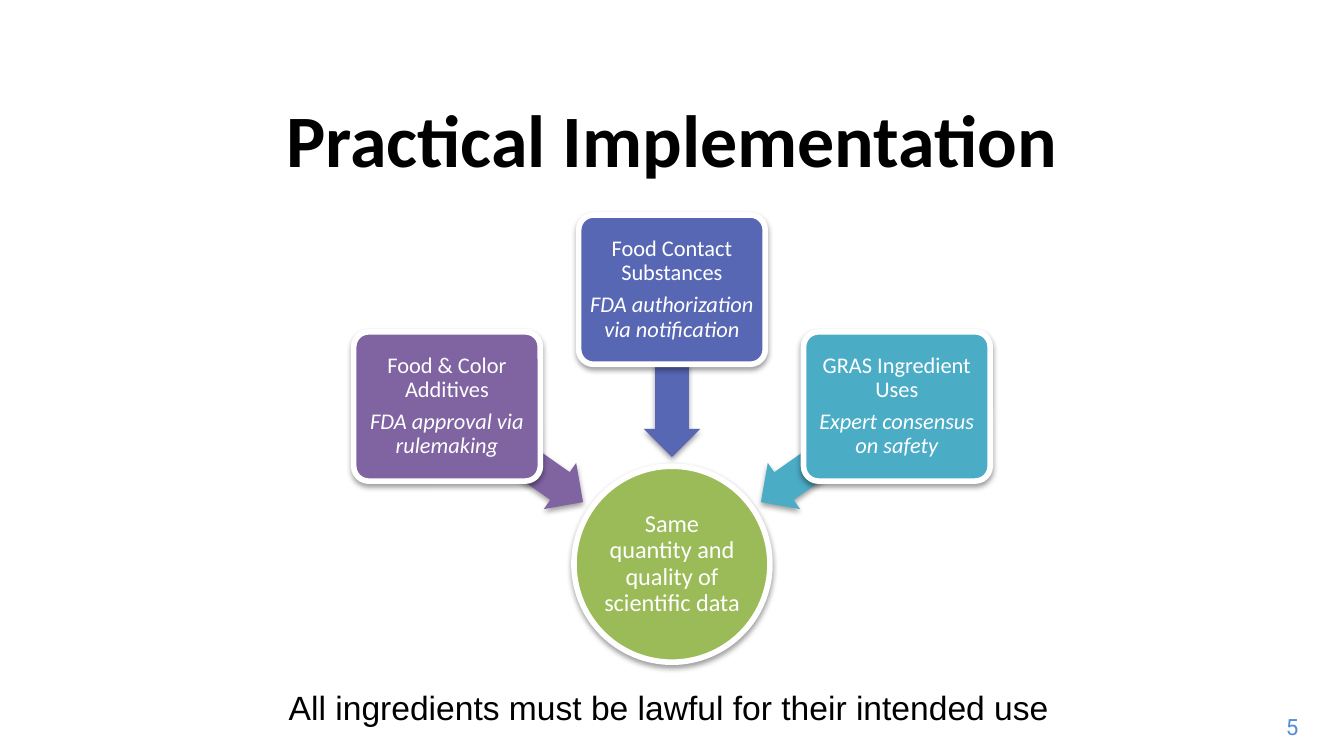
"""Build the slide on practical implementation of food ingredient rules."""
from dataclasses import dataclass

from lxml import etree
from pptx import Presentation
from pptx.dml.color import RGBColor
from pptx.enum.shapes import MSO_SHAPE
from pptx.enum.text import MSO_ANCHOR, PP_ALIGN
from pptx.oxml.ns import qn
from pptx.shapes.autoshape import Shape
from pptx.slide import Slide
from pptx.text.text import TextFrame
from pptx.util import Pt

ELLIPSE = MSO_SHAPE.OVAL
ROUNDED = MSO_SHAPE.ROUNDED_RECTANGLE
LEFT_ARROW = MSO_SHAPE.LEFT_ARROW
LEFT, CENTER, RIGHT = PP_ALIGN.LEFT, PP_ALIGN.CENTER, PP_ALIGN.RIGHT
TOP, MIDDLE = MSO_ANCHOR.TOP, MSO_ANCHOR.MIDDLE


@dataclass(frozen=True)
class Theme:
    """Colours, fonts and type sizes of the slide."""
    black: str = "000000"
    white: str = "FFFFFF"
    green: str = "9BBB59"
    purple: str = "8064A2"
    indigo: str = "5767B4"
    teal: str = "4BACC6"
    page_blue: str = "558ED5"
    heading_font: str = "Calibri"
    note_font: str = "Arial"
    page_font: str = "Roboto"
    title_size: float = 39.6
    note_size: float = 18
    hub_size: float = 13
    body_size: float = 12


@dataclass(frozen=True)
class Pathway:
    """A regulatory pathway and the arrow from it to the hub."""
    name: str
    process: str
    color: str
    side: int
    top: float
    arrow_middle: float
    rotation: float


THEME = Theme()
AXIS = 360
BOX_WIDTH, BOX_HEIGHT, BOX_OFFSET = 100, 80, 120.5
ARROW_WIDTH, ARROW_HEIGHT, ARROW_OFFSET = 89.3, 30.2, 84.2
HUB_TOP, HUB_SIZE = 249.8, 105

PATHWAYS = (
    Pathway("Food & Color Additives", "FDA approval via rulemaking",
            THEME.purple, -1, 177.8, 243.4, 215),
    Pathway("Food Contact Substances", "FDA authorization via notification",
            THEME.indigo, 0, 115.2, 200.2, 270),
    Pathway("GRAS Ingredient Uses", "Expert consensus on safety",
            THEME.teal, 1, 177.8, 243.4, 325),
)


def write_text(frame: TextFrame, *lines: str, size: float, color: str = THEME.white,
               font: str = THEME.heading_font, align: PP_ALIGN = CENTER,
               anchor: MSO_ANCHOR = MIDDLE, bold: bool = False, wrap: bool = True,
               inset: float | None = None, spacing: float = 1, after: float = 0) -> None:
    """Write one paragraph per line, with every line after the first in italics."""
    frame.word_wrap = wrap
    frame.vertical_anchor = anchor
    if inset is not None:
        frame.margin_left = frame.margin_right = Pt(inset)
        frame.margin_top = frame.margin_bottom = Pt(inset)
    for index, line in enumerate(lines):
        paragraph = frame.add_paragraph() if index else frame.paragraphs[0]
        paragraph.text = line
        paragraph.alignment = align
        paragraph.line_spacing = spacing
        paragraph.space_after = Pt(after)
        paragraph.font.name = font
        paragraph.font.size = Pt(size)
        paragraph.font.bold = bold
        paragraph.font.italic = index > 0
        paragraph.font.color.rgb = RGBColor.from_string(color)


def add_text_box(slide: Slide, left: float, top: float, width: float, height: float,
                 text: str, **text_format) -> None:
    """Add a text box holding one paragraph."""
    box = slide.shapes.add_textbox(Pt(left), Pt(top), Pt(width), Pt(height))
    write_text(box.text_frame, text, **text_format)


def add_shadow(shape: Shape) -> None:
    """Give the shape a soft shadow that falls straight down."""
    shape.shadow.inherit = False
    effects = shape.element.spPr.find(qn("a:effectLst"))
    shadow = etree.SubElement(
        effects, qn("a:outerShdw"), blurRad=str(Pt(3.1)), dist=str(Pt(1.6)),
        dir="5400000", rotWithShape="0")
    color = etree.SubElement(shadow, qn("a:srgbClr"), val=THEME.black)
    etree.SubElement(color, qn("a:alpha"), val="38000")


def add_filled_shape(slide: Slide, kind: MSO_SHAPE, center: float, top: float, width: float,
                     height: float, color: str, outlined: bool = True) -> Shape:
    """Add a shadowed shape placed by its horizontal center."""
    shape = slide.shapes.add_shape(
        kind, Pt(center - width / 2), Pt(top), Pt(width), Pt(height))
    shape.fill.solid()
    shape.fill.fore_color.rgb = RGBColor.from_string(color)
    if outlined:
        shape.line.color.rgb = RGBColor.from_string(THEME.white)
        shape.line.width = Pt(3)
    else:
        shape.line.fill.background()
    add_shadow(shape)
    return shape


def add_hub(slide: Slide) -> None:
    """Add the circle that all pathways lead to."""
    hub = add_filled_shape(slide, ELLIPSE, AXIS, HUB_TOP, HUB_SIZE, HUB_SIZE, THEME.green)
    write_text(hub.text_frame, "Same quantity and quality of scientific data",
               size=THEME.hub_size, inset=0.65, spacing=0.9, after=4.5)


def add_pathway(slide: Slide, pathway: Pathway) -> None:
    """Add the arrow of a pathway and its box on top."""
    arrow = add_filled_shape(
        slide, LEFT_ARROW, AXIS + pathway.side * ARROW_OFFSET,
        pathway.arrow_middle - ARROW_HEIGHT / 2, ARROW_WIDTH, ARROW_HEIGHT,
        pathway.color, outlined=False)
    arrow.adjustments[0] = 0.6
    arrow.adjustments[1] = 0.5
    arrow.rotation = pathway.rotation
    box = add_filled_shape(
        slide, ROUNDED, AXIS + pathway.side * BOX_OFFSET, pathway.top,
        BOX_WIDTH, BOX_HEIGHT, pathway.color)
    box.adjustments[0] = 0.1
    write_text(box.text_frame, pathway.name, pathway.process,
               size=THEME.body_size, inset=1.8, spacing=0.9, after=4.2)


def main() -> None:
    """Build and save the presentation."""
    presentation = Presentation()
    presentation.slide_width, presentation.slide_height = Pt(720), Pt(405)
    slide = presentation.slides.add_slide(presentation.slide_layouts[6])
    add_text_box(slide, 673.2, 378.7, 29.5, 21.6, "5", size=THEME.body_size,
                 color=THEME.page_blue, font=THEME.page_font, align=RIGHT,
                 anchor=TOP, wrap=False)
    add_text_box(slide, 25, 46.8, 670, 54.7, "Practical Implementation",
                 size=THEME.title_size, color=THEME.black, bold=True)
    add_hub(slide)
    for pathway in PATHWAYS:
        add_pathway(slide, pathway)
    add_text_box(slide, 147.6, 364.3, 425.5, 28.8,
                 "All ingredients must be lawful for their intended use",
                 size=THEME.note_size, color=THEME.black, font=THEME.note_font,
                 align=LEFT, anchor=TOP, wrap=False)
    presentation.save("out.pptx")


if __name__ == "__main__":
    main()
